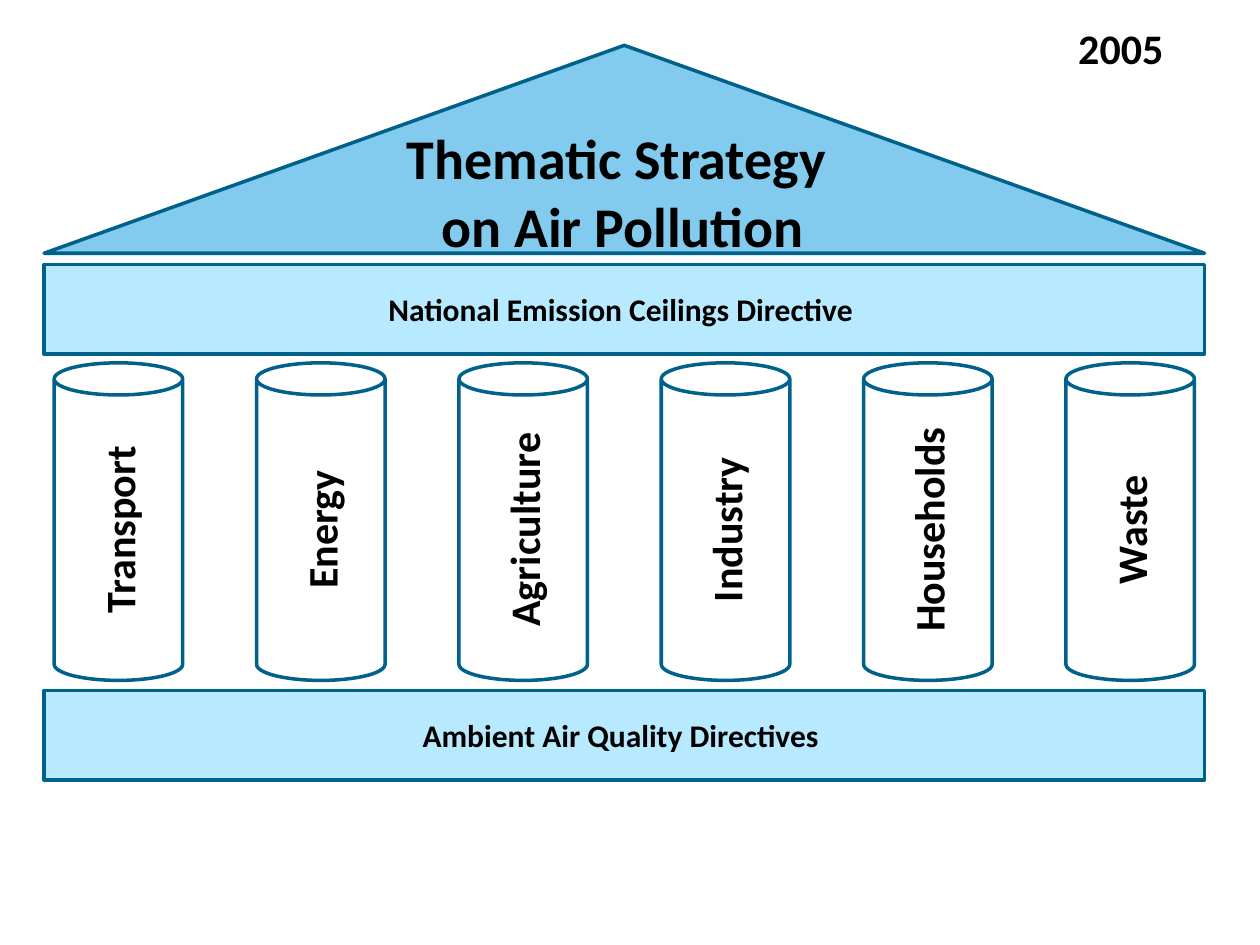
import pptx
import pptx.util
import pptx.dml.color
import pptx.enum.shapes
import pptx.enum.text

Inches = pptx.util.Inches
Kind = pptx.enum.shapes.MSO_SHAPE
Align = pptx.enum.text.PP_ALIGN
Anchor = pptx.enum.text.MSO_ANCHOR

colors = {"roof": "82CBEE", "beam": "B8EAFF", "pillar": "FFFFFF",
          "edge": "00618B", "text": "000000"}


def rgb(name):
    return pptx.dml.color.RGBColor.from_string(colors[name])


def write(shape, lines, size, **frame):
    """Fill the shape with centred bold lines; frame holds text frame values."""
    body = shape.text_frame
    for key, value in {"word_wrap": True, **frame}.items():
        setattr(body, key, value)
    body.text = "\n".join(lines)
    for para in body.paragraphs:
        para.alignment = Align.CENTER
        style = {"name": "Calibri", "size": pptx.util.Pt(size), "bold": True}
        for key, value in style.items():
            setattr(para.font, key, value)
        para.font.color.rgb = rgb("text")


deck = pptx.Presentation()
deck.slide_width, deck.slide_height = Inches(10), Inches(7.5)
slide = deck.slides.add_slide(deck.slide_layouts[6])

left, width = 0.35, 9.21
roof_pad = {"margin_left": Inches(0.1), "margin_top": Inches(0.04),
            "margin_right": Inches(0.12), "margin_bottom": Inches(0.2)}
can_pad = {"margin_top": 0, "margin_bottom": 0}

# Each part: kind, fill, box, lines, text size, margins
parts = [
    (Kind.ISOSCELES_TRIANGLE, "roof", (left, 0.36, width, 1.65),
     ["Thematic Strategy ", "on Air Pollution"], 32, roof_pad),
    (Kind.RECTANGLE, "beam", (left, 2.1, width, 0.71),
     ["National Emission Ceilings Directive "], 18, {}),
    (Kind.RECTANGLE, "beam", (left, 5.48, width, 0.71),
     ["Ambient Air Quality Directives "], 18, {}),
]
sectors = ["Transport", "Energy", "Agriculture", "Industry", "Households", "Waste"]
first, last = 0.43, 8.46
step = (last - first) / (len(sectors) - 1)
for i, sector in enumerate(sectors):
    box = (first + i * step, 2.88, 1.02, 2.52)
    parts.append((Kind.CAN, "pillar", box, [sector], 24, can_pad))

for kind, fill, box, lines, size, pad in parts:
    shape = slide.shapes.add_shape(kind, *map(Inches, box))
    shape.shadow.inherit = False
    shape.fill.solid()
    shape.fill.fore_color.rgb = rgb(fill)
    shape.line.color.rgb = rgb("edge")
    shape.line.width = pptx.util.Pt(2)
    write(shape, lines, size, vertical_anchor=Anchor.MIDDLE, **pad)
    if kind == Kind.CAN:
        shape.text_frame._txBody.bodyPr.set("vert", "vert270")

year = slide.shapes.add_textbox(*map(Inches, (8.07, 0.13, 1.65, 0.51)))
write(year, ["2005"], 24, auto_size=pptx.enum.text.MSO_AUTO_SIZE.SHAPE_TO_FIT_TEXT)

deck.save("out.pptx")
